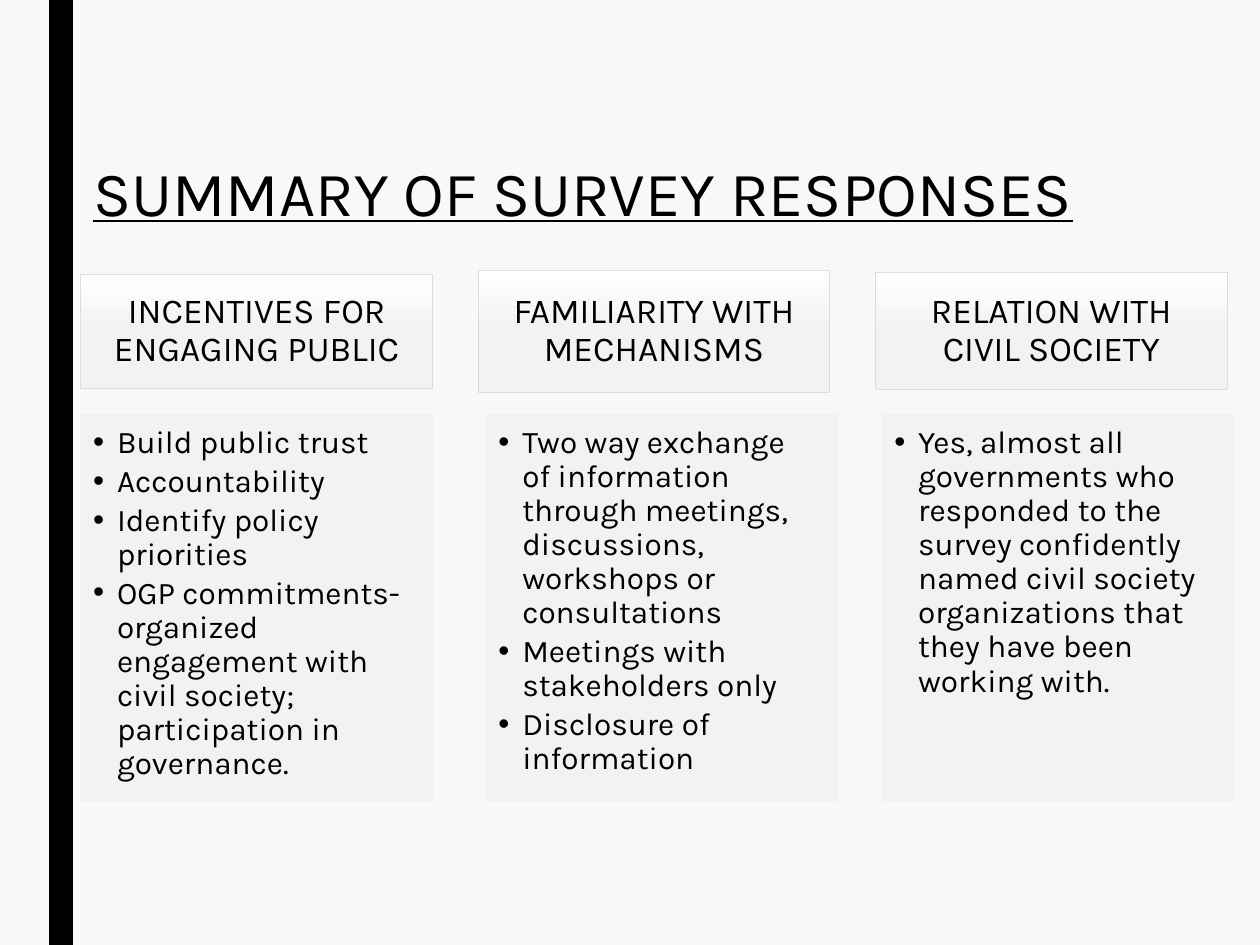
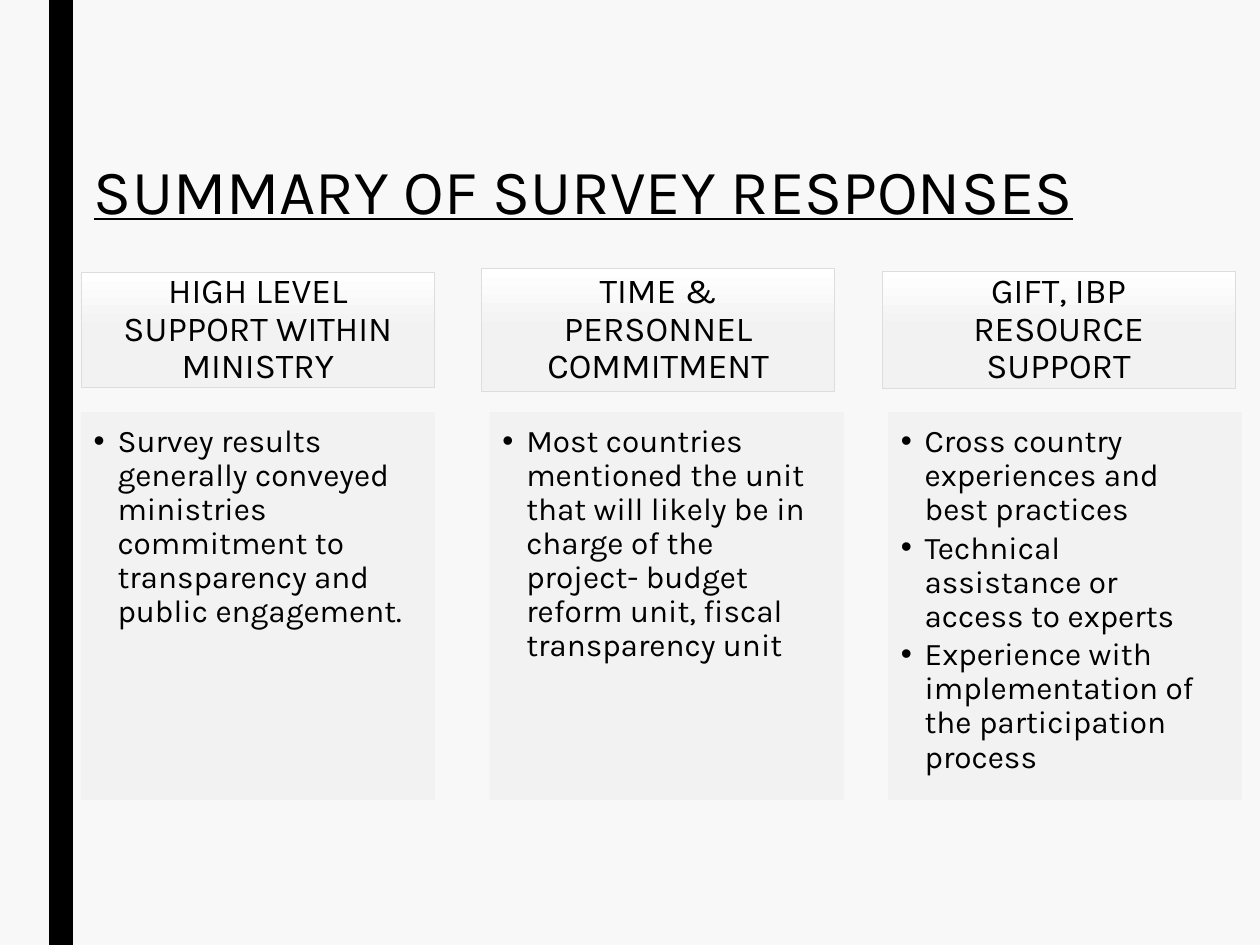
"""Build two slides of survey findings, each with three headed columns."""
import copy
import dataclasses
import typing

import pptx
import pptx.dml.color
import pptx.enum.shapes
import pptx.enum.text
import pptx.oxml.ns
import pptx.shapes.autoshape
import pptx.slide
import pptx.util
from lxml import etree

Cm = pptx.util.Cm
Pt = pptx.util.Pt
qn = pptx.oxml.ns.qn
Align = pptx.enum.text.PP_ALIGN
Anchor = pptx.enum.text.MSO_ANCHOR
Format = dict[str, typing.Any]
Rect = tuple[float, float, float, float]


def shade(code: str) -> pptx.dml.color.RGBColor:
    return pptx.dml.color.RGBColor.from_string(code)


@dataclasses.dataclass(frozen=True)
class Theme:
    font: str = "Karla"
    ink: str = "000000"
    back: str = "F8F8F8"
    panel: str = "F2F2F2"
    edge: str = "DDDDDD"
    ramp: tuple[str, ...] = ("FFFFFF", "F2F2F2", "EFEFEF")
    opaque: int = 90
    title: float = 36
    head: float = 20
    body: float = 18
    rule: float = 0.5


@dataclasses.dataclass(frozen=True)
class Card:
    head: str
    items: tuple[str, ...]
    height: float
    shift: float


@dataclasses.dataclass(frozen=True)
class Page:
    title: Rect
    pitch: float
    width: float
    middle: float
    top: float
    cards: tuple[Card, ...]


THEME = Theme()
WIDE, HIGH = 25.4, 19.05
BAR: Rect = (0.99, 0, 0.48, HIGH)
DEPTH = 7.8
INDENT = 0.48
TITLE = "SUMMARY OF SURVEY RESPONSES"

TITLE_FRAME: Format = {
    "word_wrap": True,
    "vertical_anchor": Anchor.TOP,
    "auto_size": pptx.enum.text.MSO_AUTO_SIZE.NONE,
}
HEAD_FRAME: Format = {
    "word_wrap": True,
    "vertical_anchor": Anchor.MIDDLE,
    "margin_left": Cm(0.4),
    "margin_right": Cm(0.4),
    "margin_top": Cm(0.23),
    "margin_bottom": Cm(0.23),
}
BODY_FRAME: Format = {
    "word_wrap": True,
    "vertical_anchor": Anchor.TOP,
    "margin_left": Cm(0.25),
    "margin_right": Cm(0.36),
    "margin_top": Cm(0.25),
    "margin_bottom": Cm(0.4),
}
TITLE_PARA: Format = {"alignment": Align.LEFT, "line_spacing": 0.89}
HEAD_PARA: Format = {
    "alignment": Align.CENTER, "line_spacing": 0.9, "space_after": Pt(7)}
BODY_PARA: Format = {
    "alignment": Align.LEFT, "line_spacing": 0.9, "space_after": Pt(2.7)}

PAGES = (
    Page((1.63, 3.16, 22.12, 2.84), 8.01, 7.09, 6.68, 8.35, (
        Card("INCENTIVES FOR ENGAGING PUBLIC", (
            "Build public trust",
            "Accountability",
            "Identify policy priorities",
            "OGP commitments- organized engagement with civil society; "
            "participation in governance.",
        ), 2.29, 0),
        Card("FAMILIARITY WITH MECHANISMS", (
            "Two way exchange of information through meetings, "
            "discussions, workshops or consultations",
            "Meetings with stakeholders only",
            "Disclosure of information",
        ), 2.47, 0.16),
        Card("RELATION WITH CIVIL SOCIETY", (
            "Yes, almost all governments who responded to the survey "
            "confidently named civil society organizations that they "
            "have been working with.",
        ), 2.36, 0.13),
    )),
    Page((1.64, 3.12, 21.77, 2.79), 8.07, 7.12, 6.65, 8.32, (
        Card("HIGH LEVEL SUPPORT WITHIN MINISTRY", (
            "Survey results generally conveyed ministries commitment to "
            "transparency and public engagement.",
        ), 2.31, 0),
        Card("TIME & PERSONNEL COMMITMENT", (
            "Most countries mentioned the unit that will likely be in "
            "charge of the project- budget reform unit, fiscal "
            "transparency unit",
        ), 2.48, 0.17),
        Card("GIFT, IBP RESOURCE SUPPORT", (
            "Cross country experiences and best practices",
            "Technical assistance or access to experts",
            "Experience with implementation of the participation process",
        ), 2.37, 0.13),
    )),
)


def apply(item: typing.Any, style: Format) -> None:
    for name, value in style.items():
        setattr(item, name, value)


def place(item: typing.Any, rect: Rect) -> None:
    apply(item, dict(zip(("left", "top", "width", "height"), map(Cm, rect))))


def bullet(para: typing.Any) -> None:
    props = para._p.get_or_add_pPr()
    props.set("marL", str(Cm(INDENT)))
    props.set("indent", str(-Cm(INDENT)))
    etree.SubElement(props, qn("a:buFont"), typeface="Arial")
    etree.SubElement(props, qn("a:buChar"), char="•")


def write(shape: typing.Any, lines: tuple[str, ...], size: float,
          frame: Format, style: Format, dots: bool = False,
          under: bool = False) -> None:
    text = shape.text_frame
    apply(text, frame)
    for spot, line in enumerate(lines):
        para = text.add_paragraph() if spot else text.paragraphs[0]
        if dots:
            bullet(para)
        apply(para, style)
        run = para.add_run()
        run.text = line
        apply(run.font, {"name": THEME.font, "size": Pt(size),
                         "underline": under})
        run.font.color.rgb = shade(THEME.ink)


def box(slide: pptx.slide.Slide, rect: Rect, fill: str,
        edge: str | None = None) -> pptx.shapes.autoshape.Shape:
    shape = slide.shapes.add_shape(
        pptx.enum.shapes.MSO_SHAPE.RECTANGLE, *map(Cm, rect))
    shape.shadow.inherit = False
    shape.fill.solid()
    shape.fill.fore_color.rgb = shade(fill)
    if edge:
        shape.line.color.rgb = shade(edge)
        shape.line.width = Pt(THEME.rule)
    else:
        shape.line.fill.background()
    return shape


def blend(shape: pptx.shapes.autoshape.Shape) -> None:
    shape.fill.gradient()
    shape.fill.gradient_angle = 270
    stops = shape.element.spPr.find(qn("a:gradFill")).find(qn("a:gsLst"))
    stops.insert(1, copy.deepcopy(stops[0]))
    for spot, (stop, tone) in enumerate(
            zip(shape.fill.gradient_stops, THEME.ramp)):
        stop.position = spot / (len(THEME.ramp) - 1)
        stop.color.rgb = shade(tone)


def fade(shape: pptx.shapes.autoshape.Shape) -> None:
    for tone in shape.element.spPr.iter(qn("a:srgbClr")):
        etree.SubElement(tone, qn("a:alpha"), val=str(THEME.opaque * 1000))


def draw_card(slide: pptx.slide.Slide, page: Page, card: Card,
              left: float) -> None:
    top = page.middle - card.height / 2
    head = box(slide, (left, top, page.width, card.height),
               THEME.panel, THEME.edge)
    blend(head)
    write(head, (card.head,), THEME.head, HEAD_FRAME, HEAD_PARA)
    body = box(slide, (left + card.shift, page.top, page.width, DEPTH),
               THEME.panel, THEME.panel)
    fade(body)
    write(body, card.items, THEME.body, BODY_FRAME, BODY_PARA, dots=True)


def draw_page(deck: typing.Any, page: Page) -> None:
    slide = deck.slides.add_slide(deck.slide_layouts[5])
    box(slide, BAR, THEME.ink)
    title = slide.shapes.title
    place(title, page.title)
    write(title, (TITLE,), THEME.title, TITLE_FRAME, TITLE_PARA, under=True)
    for spot, card in enumerate(page.cards):
        draw_card(slide, page, card, page.title[0] + spot * page.pitch)


def main() -> None:
    deck = pptx.Presentation()
    apply(deck, {"slide_width": Cm(WIDE), "slide_height": Cm(HIGH)})
    fill = deck.slide_master.background.fill
    fill.solid()
    fill.fore_color.rgb = shade(THEME.back)
    for page in PAGES:
        draw_page(deck, page)
    deck.save("out.pptx")


if __name__ == "__main__":
    main()
